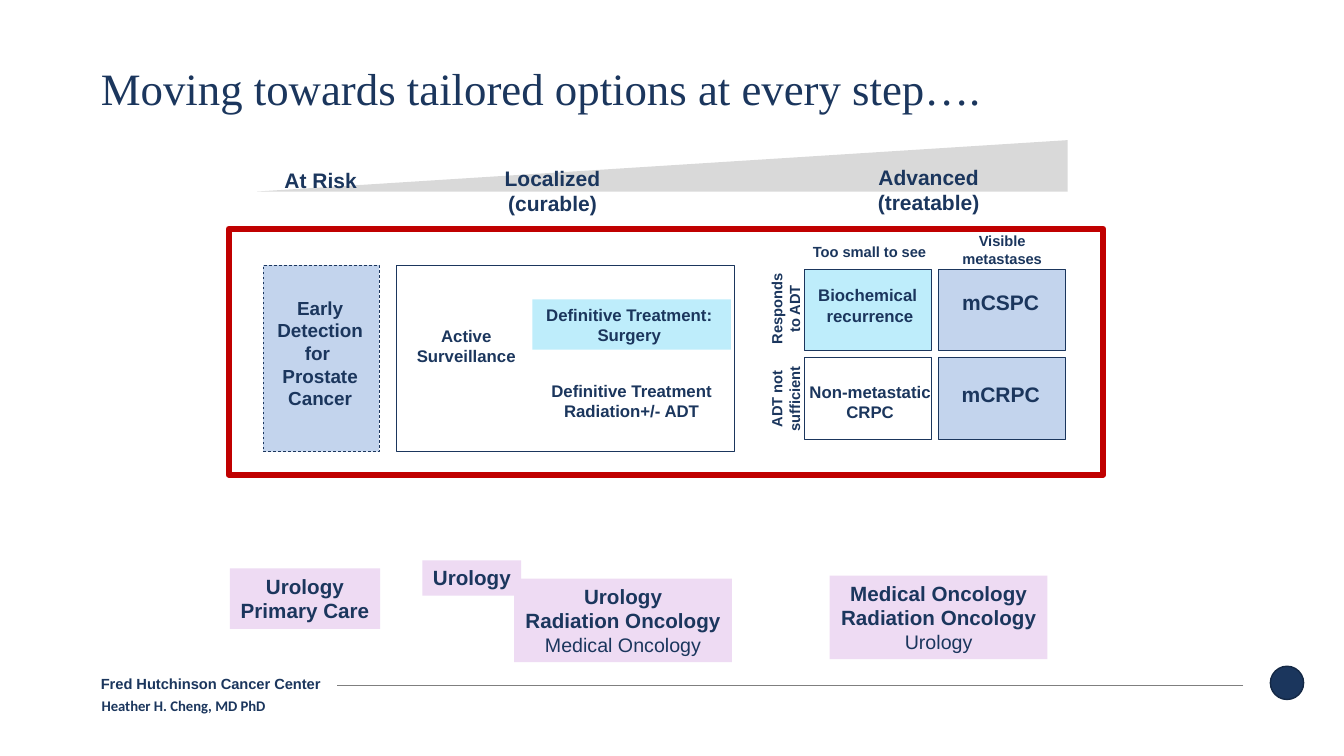
import dataclasses
import pptx
import pptx.util
import pptx.dml.color
import pptx.enum.dml
import pptx.enum.shapes
import pptx.enum.text
import pptx.oxml.xmlchemy

Inches = pptx.util.Inches
RECTANGLE = pptx.enum.shapes.MSO_SHAPE.RECTANGLE
ANCHOR = pptx.enum.text.MSO_ANCHOR
ALIGN = pptx.enum.text.PP_ALIGN


@dataclasses.dataclass(frozen=True)
class Theme:
    navy: str = "1B365D"
    navy_edge: str = "142845"
    blue: str = "C3D4ED"
    cyan: str = "BEEDFB"
    lilac: str = "EEDBF3"
    grey: str = "D9D9D9"
    rule: str = "7F7F7F"
    red: str = "C00000"
    white: str = "FFFFFF"
    title: float = 32
    heading: float = 15
    team: float = 14.7
    support: float = 14
    detection: float = 13.5
    option: float = 12
    small: float = 10.5


theme = Theme()


def write(text, at=None, holder=None, size=theme.option, font="Arial", bold=True,
          align=ALIGN.CENTER, anchor=ANCHOR.TOP, wrap=True, margins=(0.1, 0.05),
          fill=None, rotation=0, spacing=None, light_last=False):
    holder = holder or slide.shapes.add_textbox(*map(Inches, at))
    holder.rotation = rotation
    if fill:
        holder.fill.solid()
        holder.fill.fore_color.rgb = pptx.dml.color.RGBColor.from_string(fill)
    frame = holder.text_frame
    frame.text = text
    frame.word_wrap = wrap
    frame.vertical_anchor = anchor
    frame.margin_left = frame.margin_right = Inches(margins[0])
    frame.margin_top = frame.margin_bottom = Inches(margins[1])
    for paragraph in frame.paragraphs:
        light = light_last and paragraph.text == frame.paragraphs[-1].text
        paragraph.alignment = align
        paragraph.line_spacing = spacing
        for run in paragraph.runs:
            run.font.name = font
            run.font.size = pptx.util.Pt(theme.support if light else size)
            run.font.bold = bold and not light
            run.font.color.rgb = pptx.dml.color.RGBColor.from_string(theme.navy)


def draw(kind, at, fill=None, line=None, weight=0.5):
    shape = slide.shapes.add_shape(kind, *map(Inches, at))
    shape.shadow.inherit = False
    if fill:
        shape.fill.solid()
        shape.fill.fore_color.rgb = pptx.dml.color.RGBColor.from_string(fill)
    else:
        shape.fill.background()
    if line:
        shape.line.color.rgb = pptx.dml.color.RGBColor.from_string(line)
        shape.line.width = pptx.util.Pt(weight)
    else:
        shape.line.fill.background()
    return shape


deck = pptx.Presentation()
deck.slide_width, deck.slide_height = Inches(13.33), Inches(7.5)
slide = deck.slides.add_slide(deck.slide_layouts[5])

title = slide.shapes.title
title.left, title.top, title.width, title.height = map(Inches, (1, 0.4, 11.33, 1))
write("Moving towards tailored options at every step….", holder=title,
      size=theme.title, font="Times New Roman", bold=False, align=ALIGN.LEFT,
      anchor=ANCHOR.MIDDLE, margins=(0, 0), spacing=0.9)

draw(pptx.enum.shapes.MSO_SHAPE.OVAL, (12.6, 6.61, 0.33, 0.33),
     theme.navy, theme.navy_edge, 1)
write("Fred Hutchinson Cancer Center", (1, 6.58, 3.27, 0.4), size=theme.small,
      align=ALIGN.LEFT, anchor=ANCHOR.MIDDLE, margins=(0, 0))
write("Heather H. Cheng, MD PhD", (0.91, 6.88, 10.54, 0.29), size=theme.small,
      font="Calibri", align=ALIGN.LEFT, spacing=0.9)
footer_rule = slide.shapes.add_connector(
    pptx.enum.shapes.MSO_CONNECTOR.STRAIGHT,
    Inches(12.33), Inches(6.8), Inches(3.34), Inches(6.8))
footer_rule.line.color.rgb = pptx.dml.color.RGBColor.from_string(theme.rule)
footer_rule.line.width = pptx.util.Pt(0.75)
footer_rule._element.spPr.append(pptx.oxml.xmlchemy.OxmlElement("a:effectLst"))

severity = draw(pptx.enum.shapes.MSO_SHAPE.RIGHT_TRIANGLE,
                (2.55, 1.39, 8.04, 0.51), theme.grey)
severity._element.spPr.xfrm.set("flipH", "1")
for stage, left, top, height in (
    ("At Risk", 2.1, 1.61, 0.35),
    ("Localized\n(curable)", 4.4, 1.59, 0.61),
    ("Advanced\n(treatable)", 8.13, 1.58, 0.61),
):
    write(stage, (left, top, 2.16, height), size=theme.heading)

early = draw(RECTANGLE, (2.61, 2.63, 1.15, 1.85), theme.blue, theme.navy)
early.line.dash_style = pptx.enum.dml.MSO_LINE.DASH
write("Early Detection\nfor \nProstate Cancer", (2.62, 2.89, 1.11, 1.24),
      size=theme.detection, fill=theme.blue)

draw(RECTANGLE, (3.93, 2.63, 3.35, 1.85), line=theme.navy)
write("Active\nSurveillance", (3.64, 3.18, 1.97, 0.5))
write("Definitive Treatment: \nSurgery ", (5.28, 2.97, 1.97, 0.5), fill=theme.cyan)
write("Definitive Treatment\nRadiation+/- ADT", (5.28, 3.73, 1.97, 0.5))

for row, fills in enumerate(((theme.cyan, theme.blue), (theme.white, theme.blue))):
    for column, fill in enumerate(fills):
        draw(RECTANGLE, (7.98 + 1.33 * column, 2.67 + 0.88 * row, 1.26, 0.81),
             fill, theme.navy)
write("Biochemical \nrecurrence", (8.01, 2.78, 1.24, 0.51), wrap=False)
write("Non-metastatic\nCRPC", (7.92, 3.74, 1.42, 0.51), wrap=False)
for disease, top in (("mCSPC", 2.82), ("mCRPC", 3.74)):
    write(disease, (9.43, top, 0.99, 0.35), size=theme.heading, wrap=False)
for response, top in (("Responds to ADT", 2.84), ("ADT not sufficient", 3.73)):
    write(response, (7.32, top, 0.94, 0.45), size=theme.small, rotation=270)
write("Too small to see", (7.94, 2.36, 1.37, 0.28), size=theme.small)
write("Visible metastases", (9.38, 2.25, 1.12, 0.45), size=theme.small)

for team, at, light_last in (
    ("Urology\nPrimary Care", (2.28, 5.64, 1.49, 0.6), False),
    ("Urology\nRadiation Oncology\nMedical Oncology", (5.1, 5.74, 2.16, 0.83), True),
    ("Medical Oncology\nRadiation Oncology\nUrology", (8.23, 5.71, 2.16, 0.83), True),
    ("Urology", (4.19, 5.56, 0.98, 0.35), False),
):
    write(team, at, size=theme.team, fill=theme.lilac, wrap=False,
          light_last=light_last)

draw(RECTANGLE, (2.27, 2.27, 8.67, 2.44), line=theme.red, weight=4.5)

deck.save("out.pptx")
